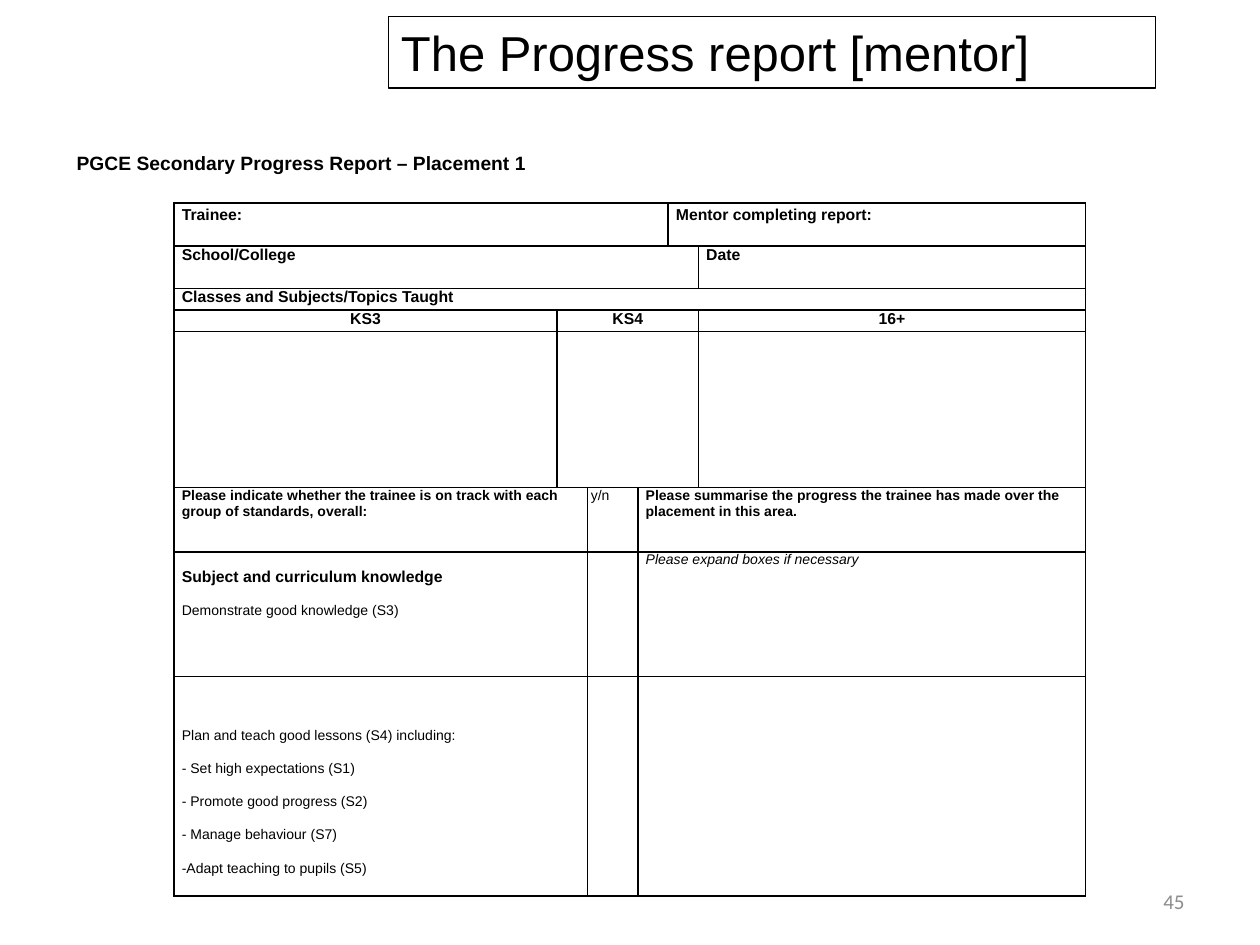
import dataclasses
import typing

import lxml.etree
import pptx
import pptx.dml.color
import pptx.enum.shapes
import pptx.enum.text
import pptx.oxml.ns
import pptx.util

Pt = pptx.util.Pt
Align = pptx.enum.text.PP_ALIGN
Anchor = pptx.enum.text.MSO_ANCHOR
qn = pptx.oxml.ns.qn

BLACK = pptx.dml.color.RGBColor(0, 0, 0)
GREY = pptx.dml.color.RGBColor(0x8C, 0x8C, 0x8C)

COLS = [218.9, 17.3, 28.9, 17.3, 17.3, 221.3]
ROWS = [24.5, 24.5, 12.2, 12.2, 89.2, 37, 71.2, 125.2]
SIDES = ("a:lnL", "a:lnR", "a:lnT", "a:lnB")


@dataclasses.dataclass
class Line:
    text: str
    size: float = 9
    bold: bool = True
    italic: bool = False
    align: typing.Any = Align.LEFT
    lead: typing.Optional[float] = None


@dataclasses.dataclass
class Box:
    row: int
    col: int
    span: int = 1
    lines: typing.Sequence[Line] = ()
    inset: float = 4.5
    top: float = 0


def body(text: str, **form) -> Line:
    return Line(text, size=8, bold=False, lead=19, **form)


def head(text: str) -> Line:
    return Line(text, align=Align.CENTER)


BOXES = [
    # Names, place and date
    Box(0, 0, 4, [Line("Trainee:")], top=1.9),
    Box(0, 4, 2, [Line("Mentor completing report:")], top=1.9),
    Box(1, 0, 5, [Line("School/College")]),
    Box(1, 5, 1, [Line("Date")]),
    # Classes taught
    Box(2, 0, 6, [Line("Classes and Subjects/Topics Taught")]),
    Box(3, 0, 1, [head("KS3")]),
    Box(3, 1, 4, [head("KS4")], inset=0),
    Box(3, 5, 1, [head("16+")]),
    Box(4, 1, 4),
    # Progress against the standards
    Box(5, 0, 2, [Line("Please indicate whether the trainee is on track with "
                       "each group of standards, overall:", size=8)]),
    Box(5, 2, 1, [Line("y/n", size=8, bold=False)], inset=2),
    Box(5, 3, 3, [Line("Please summarise the progress the trainee has made "
                       "over the placement in this area.", size=8)]),
    Box(6, 0, 2, [Line("Subject and curriculum knowledge", lead=19),
                  body("Demonstrate good knowledge (S3)")]),
    Box(6, 3, 3, [Line("Please expand boxes if necessary", size=8,
                       bold=False, italic=True)]),
    Box(7, 0, 2, [body("Plan and teach good lessons (S4) including:"),
                  body("- Set high expectations (S1)"),
                  body("- Promote good progress (S2)"),
                  body("- Manage behaviour (S7)"),
                  body("-Adapt teaching to pupils (S5)")], top=19),
    Box(7, 3, 3),
]


def write(para, text: str, *, size: float = 9, bold: bool = False,
          italic: bool = False, align=Align.LEFT, lead=None,
          face: str = "Arial", color=BLACK) -> None:
    para.alignment = align
    if lead:
        para.line_spacing = Pt(lead)
    run = para.add_run()
    run.text = text
    font = run.font
    font.name, font.size = face, Pt(size)
    font.bold, font.italic = bold, italic
    font.color.rgb = color


def label(slide, area: typing.Sequence[float], text: str, *,
          anchor=Anchor.TOP, **form) -> None:
    shape = slide.shapes.add_textbox(*map(Pt, area))
    frame = shape.text_frame
    frame.word_wrap = True
    frame.vertical_anchor = anchor
    write(frame.paragraphs[0], text, **form)


def clear(cell) -> None:
    """Give a cell black edges, no fill and a small empty line."""
    cell.margin_top = cell.margin_bottom = 0
    props = cell._tc.get_or_add_tcPr()
    for side in SIDES:
        edge = lxml.etree.SubElement(props, qn(side), w=str(Pt(1)))
        fill = lxml.etree.SubElement(edge, qn("a:solidFill"))
        lxml.etree.SubElement(fill, qn("a:srgbClr"), val=str(BLACK))
    cell.fill.background()
    para = cell.text_frame.paragraphs[0]
    lxml.etree.SubElement(para._p, qn("a:endParaRPr"), sz="800")


def fill_box(table, box: Box) -> None:
    cell = table.cell(box.row, box.col)
    if box.span > 1:
        cell.merge(table.cell(box.row, box.col + box.span - 1))
    cell.margin_left = cell.margin_right = Pt(box.inset)
    cell.margin_top = Pt(box.top)
    frame = cell.text_frame
    for num, line in enumerate(box.lines):
        para = frame.add_paragraph() if num else frame.paragraphs[0]
        write(para, **dataclasses.asdict(line))


def add_form(slide) -> None:
    frame = slide.shapes.add_table(
        len(ROWS), len(COLS), Pt(99.4), Pt(116),
        Pt(sum(COLS)), Pt(sum(ROWS)))
    table = frame.table
    table.first_row = table.horz_banding = False
    for col, width in zip(table.columns, COLS):
        col.width = Pt(width)
    for row, height in zip(table.rows, ROWS):
        row.height = Pt(height)
    for cell in table.iter_cells():
        clear(cell)
    for box in BOXES:
        fill_box(table, box)


def add_title(slide) -> None:
    shape = slide.shapes.add_shape(
        pptx.enum.shapes.MSO_SHAPE.RECTANGLE,
        Pt(222), Pt(9.4), Pt(438.5), Pt(41))
    shape.shadow.inherit = False
    shape.fill.background()
    shape.line.color.rgb = BLACK
    shape.line.width = Pt(0.75)
    frame = shape.text_frame
    frame.word_wrap = True
    frame.vertical_anchor = Anchor.TOP
    write(frame.paragraphs[0], "The Progress report [mentor]", size=28)


def main() -> None:
    deck = pptx.Presentation()
    deck.slide_width, deck.slide_height = Pt(720), Pt(540)
    slide = deck.slides.add_slide(deck.slide_layouts[6])

    # Page number
    label(slide, (516, 500.5, 168, 28.8), "45", size=12, face="Calibri",
          color=GREY, align=Align.RIGHT, anchor=Anchor.MIDDLE)
    # Report form
    add_form(slide)
    # Heading and title
    label(slide, (36.7, 83, 640, 22),
          "PGCE Secondary Progress Report – Placement 1",
          size=11, bold=True)
    add_title(slide)

    deck.save("out.pptx")


if __name__ == "__main__":
    main()
